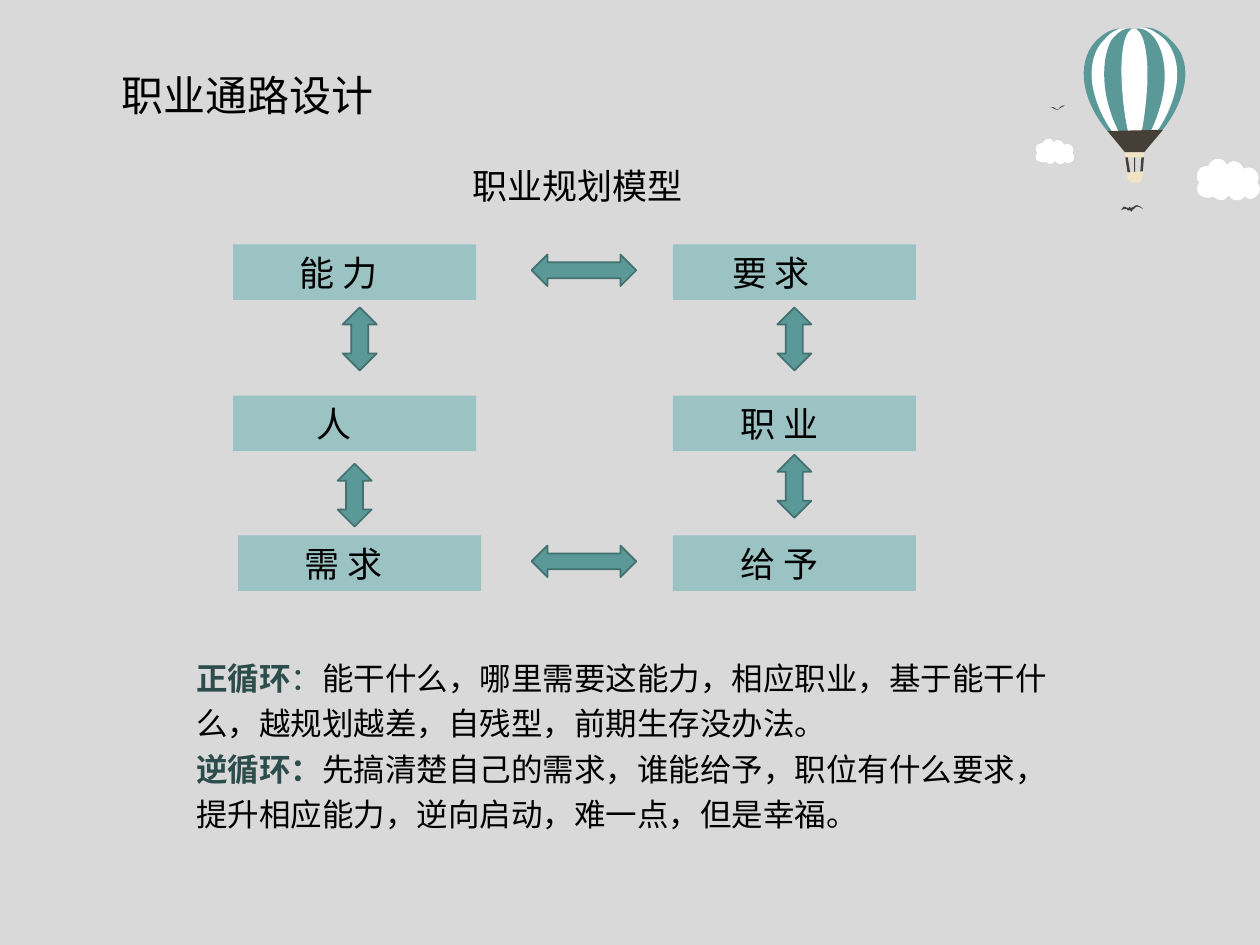
from lxml import etree
from pptx import Presentation
from pptx.dml.color import RGBColor
from pptx.enum.shapes import MSO_SHAPE
from pptx.enum.text import MSO_ANCHOR, PP_ALIGN
from pptx.oxml.ns import qn
from pptx.util import Inches, Pt

RECTANGLE = MSO_SHAPE.RECTANGLE
ACROSS = MSO_SHAPE.LEFT_RIGHT_ARROW
UPRIGHT = MSO_SHAPE.UP_DOWN_ARROW
MIDDLE = MSO_ANCHOR.MIDDLE
LEFT = PP_ALIGN.LEFT

FONT = "Noto Sans CJK SC"
COLORS = {
    "background": "D9D9D9", "text": "000000", "lead": "2D4C4C",
    "box": "9BC3C3", "teal": "5B9898", "outline": "437070",
    "white": "FFFFFF", "dark": "463F37", "cream": "F1E4C4", "bird": "414042",
}

CLOUD = [
    (17, 0), (13, 0, 10, 3, 9, 6), (8, 6, 8, 6, 7, 6), (3, 6, 0, 9, 0, 14),
    (0, 16, 0, 17, 2, 19), (1, 20, 0, 22, 0, 24), (0, 28, 4, 31, 8, 31),
    (10, 31, 12, 31, 13, 30), (14, 31, 17, 33, 19, 33), (22, 33, 24, 31, 25, 29),
    (27, 32, 29, 33, 32, 33), (35, 33, 36, 32, 38, 30), (39, 31, 41, 32, 42, 32),
    (46, 32, 50, 28, 50, 24), (50, 22, 49, 20, 48, 19), (48, 17, 49, 16, 49, 15),
    (49, 11, 45, 7, 41, 7), (39, 7, 38, 8, 37, 8), (36, 5, 33, 2, 29, 2),
    (27, 2, 25, 3, 24, 5), (22, 2, 20, 0, 17, 0),
]
LEFT_ROPE = [(34, 104), (36, 117), (38, 117), (36, 104), (34, 104)]
RIGHT_ROPE = [(47, 104), (46, 117), (48, 117), (49, 104), (47, 104)]
BASKET = [(48, 116), (48, 117, 48, 117, 48, 118), (48, 121, 47, 124, 45, 125),
          (39, 125, 39, 125, 39, 125), (37, 124, 35, 121, 35, 118),
          (35, 117, 35, 117, 35, 117), (48, 116)]
STRIPES = [
    ("teal", [(77, 20), (83, 30, 83, 43, 79, 55), (71, 81, 49, 100, 42, 100),
              (34, 100, 12, 81, 4, 56), (0, 44, 0, 31, 5, 21), (9, 12, 22, 1, 32, 3),
              (35, 3, 38, 3, 41, 4), (43, 3, 46, 3, 48, 2), (59, 0, 72, 12, 77, 20)]),
    ("white", [(64, 10), (75, 20, 78, 38, 73, 55), (66, 81, 48, 100, 42, 100),
               (35, 100, 17, 81, 10, 56), (5, 39, 7, 21, 18, 11), (22, 6, 29, 1, 36, 3),
               (37, 3, 40, 3, 41, 4), (43, 3, 44, 3, 46, 2), (53, 1, 60, 7, 64, 10)]),
    ("teal", [(59, 13), (65, 23, 67, 39, 64, 55), (59, 81, 46, 100, 42, 100),
              (37, 100, 24, 81, 19, 56), (16, 40, 17, 23, 23, 12), (27, 7, 33, 1, 40, 3),
              (40, 3, 40, 3, 41, 3), (41, 3, 42, 3, 43, 3), (48, 1, 56, 7, 59, 13)]),
    ("white", [(45, 5), (51, 12, 53, 34, 51, 55), (49, 81, 44, 100, 42, 100),
               (40, 100, 34, 81, 32, 55), (30, 34, 31, 12, 37, 5), (39, 2, 43, 2, 45, 5)]),
]
BURNER = [(64, 83), (49, 101), (34, 101), (20, 84), (64, 83)]
GLIDING_BIRD = [
    (10, 1), (9, 1, 7, 3, 7, 4), (6, 4, 4, 3, 3, 2), (3, 2, 3, 2, 3, 2),
    (2, 2, 0, 2, 0, 2), (0, 2, 3, 2, 3, 3), (4, 4, 6, 4, 6, 4), (6, 4, 7, 5, 7, 4),
    (7, 4, 8, 3, 8, 3), (9, 3, 10, 1, 12, 1), (12, 1, 12, 1, 12, 1), (12, 1, 12, 0, 10, 1),
]
FLAPPING_BIRD = [
    (0, 5), (0, 5, 0, 3, 2, 2), (3, 2, 4, 2, 5, 3), (7, 4, 6, 3, 6, 3), (6, 3, 6, 3, 6, 2),
    (6, 2, 7, 3, 8, 3), (9, 3, 9, 3, 10, 2), (12, 0, 13, 1, 15, 2), (17, 3, 17, 4, 17, 4),
    (17, 4, 15, 2, 12, 2), (11, 3, 9, 5, 8, 5), (8, 5, 9, 5, 9, 5), (8, 5, 8, 5, 8, 6),
    (8, 6, 7, 5, 7, 5), (7, 5, 6, 5, 5, 5), (4, 4, 4, 3, 2, 4), (1, 4, 0, 5, 0, 5),
]


def rgb(name):
    """Return the named colour."""
    return RGBColor.from_string(COLORS[name])


def paint(shape, fill, line=None):
    """Give a shape a flat fill and an optional thin outline."""
    shape.shadow.inherit = False
    shape.fill.solid()
    shape.fill.fore_color.rgb = rgb(fill)
    if line:
        shape.line.color.rgb = rgb(line)
        shape.line.width = Pt(1)
    else:
        shape.line.fill.background()


def add_preset(slide, kind, left, top, width, height, fill, line=None):
    """Add a painted preset shape."""
    shape = slide.shapes.add_shape(kind, Inches(left), Inches(top), Inches(width), Inches(height))
    paint(shape, fill, line)
    return shape


def add_outline(slide, left, top, outline, fill, scale=1):
    """Draw points and Bezier segments given in hundredths of an inch."""
    points = [(Inches(left + segment[i] * scale / 100), Inches(top + segment[i + 1] * scale / 100))
              for segment in outline for i in range(0, len(segment), 2)]
    builder = slide.shapes.build_freeform(*points[0])
    builder.add_line_segments(points[1:], close=True)
    shape = builder.convert_to_shape()
    lines = iter(list(shape._element.iter(qn("a:lnTo"))))
    for segment in outline[1:]:
        curve = next(lines)
        if len(segment) == 6:
            curve.tag = qn("a:cubicBezTo")
            for extra in (next(lines), next(lines)):
                curve.append(extra[0])
                extra.getparent().remove(extra)
    paint(shape, fill)


def set_font(paragraph, size):
    """Set the font of a paragraph for Latin and Chinese text."""
    paragraph.alignment = LEFT
    paragraph.font.size = Pt(size)
    paragraph.font.color.rgb = rgb("text")
    paragraph.font.name = FONT
    properties = paragraph._p.get_or_add_pPr().find(qn("a:defRPr"))
    etree.SubElement(properties, qn("a:ea"), typeface=FONT)


def add_text_box(slide, left, top, width, height):
    """Add a wrapping text box and return its text frame."""
    box = slide.shapes.add_textbox(Inches(left), Inches(top), Inches(width), Inches(height))
    box.text_frame.word_wrap = True
    return box.text_frame


def add_heading(slide, left, top, width, height, text, size):
    """Add a one-line heading."""
    paragraph = add_text_box(slide, left, top, width, height).paragraphs[0]
    paragraph.text = text
    set_font(paragraph, size)


def add_balloon(slide, left, top):
    """Draw the hot-air balloon."""
    add_outline(slide, left, top, LEFT_ROPE, "dark")
    add_preset(slide, RECTANGLE, left + 0.41, top + 1.04, 0.01, 0.13, "dark")
    add_outline(slide, left, top, RIGHT_ROPE, "dark")
    for fill, outline in [STRIPES[0], ("cream", BASKET), *STRIPES[1:], ("dark", BURNER)]:
        add_outline(slide, left, top, outline, fill)
    add_preset(slide, RECTANGLE, left + 0.34, top + 1.01, 0.15, 0.04, "cream")


def add_sky(slide, left, top):
    """Draw the clouds, balloon and birds in the corner."""
    add_outline(slide, left + 1.28, top + 1.06, CLOUD, "white")
    add_outline(slide, left, top + 0.9, CLOUD, "white", 0.61)
    add_balloon(slide, left + 0.37, top)
    add_outline(slide, left + 0.11, top + 0.63, GLIDING_BIRD, "bird")
    add_outline(slide, left + 0.68, top + 1.42, FLAPPING_BIRD, "bird")


def add_model(slide, left, top):
    """Draw the six boxes of the planning model and the arrows between them."""
    right = 3.49
    boxes = [
        (0, 0, "能 力", 0.53), (right, 0, "要 求", 0.47),
        (0, 1.2, "人", 0.66), (0.04, 2.31, "需 求", 0.53),
        (right, 1.2, "职 业", 0.54), (right, 2.31, "给 予", 0.54),
    ]
    for x, y, text, indent in boxes:
        frame = add_preset(slide, RECTANGLE, left + x, top + y, 1.93, 0.44, "box").text_frame
        frame.margin_left = Inches(indent)
        frame.vertical_anchor = MIDDLE
        frame.paragraphs[0].text = text
        set_font(frame.paragraphs[0], 20)
    add_heading(slide, left + 1.8, top - 0.68, 1.98, 0.44, "职业规划模型", 20)
    arrows = [(ACROSS, 0.83, 0.25, [(2.37, 0.08), (2.37, 2.39)]),
              (UPRIGHT, 0.27, 0.5, [(0.87, 0.5), (4.32, 0.5), (0.83, 1.74), (4.32, 1.67)])]
    for kind, width, height, places in arrows:
        for x, y in places:
            add_preset(slide, kind, left + x, top + y, width, height, "teal", "outline")


def add_explanation(slide, left, top, width, height):
    """Write the two cycles, each with a coloured lead-in."""
    frame = add_text_box(slide, left, top, width, height)
    cycles = [
        [("正循环", "lead", True), ("：", "lead", False),
         ("能干什么，哪里需要这能力，相应职业，基于能干什么，越规划越差，自残型，前期生存没办法。",
          "text", False)],
        [("逆循环：", "lead", True),
         ("先搞清楚自己的需求，谁能给予，职位有什么要求，提升相应能力，逆向启动，难一点，但是幸福。",
          "text", False)],
    ]
    for index, cycle in enumerate(cycles):
        paragraph = frame.add_paragraph() if index else frame.paragraphs[0]
        paragraph.line_spacing = 1.2
        set_font(paragraph, 18)
        for text, color, bold in cycle:
            run = paragraph.add_run()
            run.text = text
            run.font.bold = bold
            run.font.color.rgb = rgb(color)


def main():
    """Build the slide and save it."""
    presentation = Presentation()
    presentation.slide_width, presentation.slide_height = Inches(10), Inches(7.5)
    slide = presentation.slides.add_slide(presentation.slide_layouts[6])
    slide.background.fill.solid()
    slide.background.fill.fore_color.rgb = rgb("background")
    add_sky(slide, 8.22, 0.2)
    add_heading(slide, 0.87, 0.5, 3.36, 0.5, "职业通路设计", 24)
    add_model(slide, 1.85, 1.94)
    add_explanation(slide, 1.46, 5.12, 7.03, 1.55)
    presentation.save("out.pptx")


if __name__ == "__main__":
    main()
